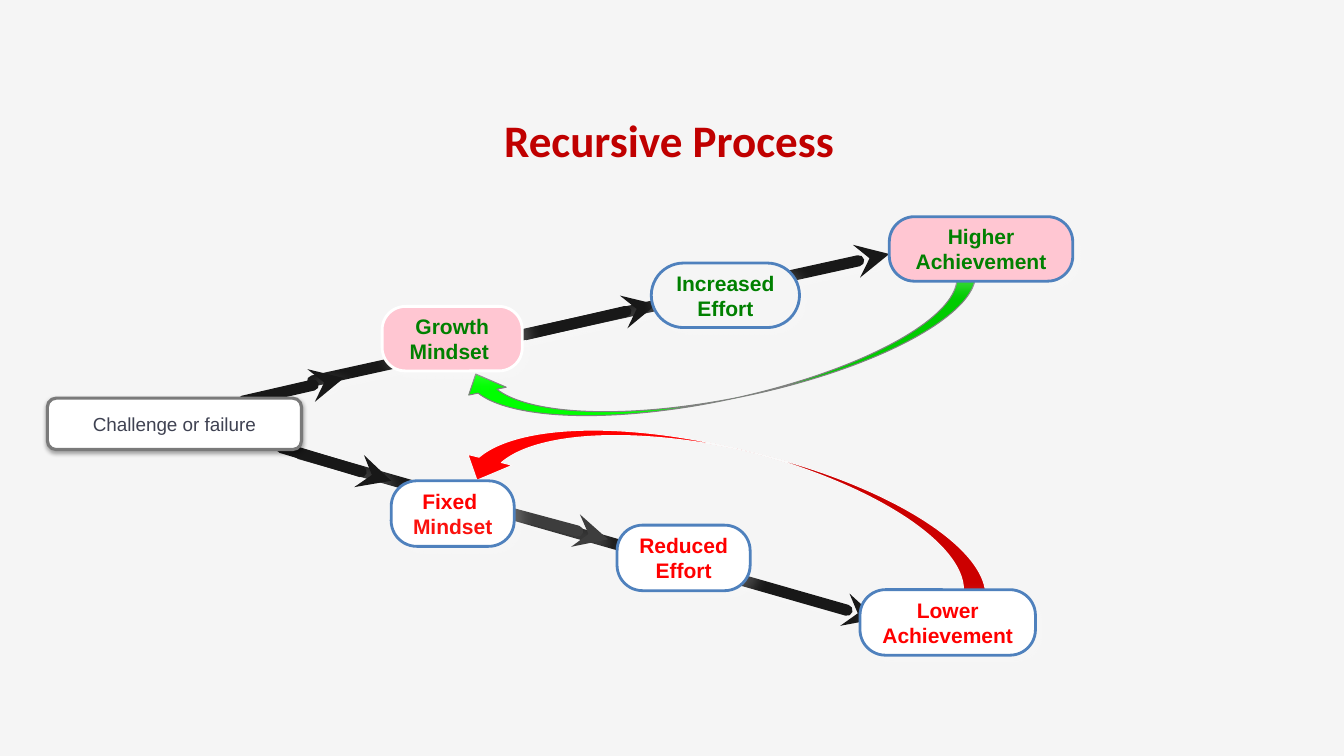
from lxml import etree
from pptx import Presentation
from pptx.dml.color import RGBColor
from pptx.enum import shapes, text
from pptx.oxml.ns import qn
from pptx.util import Inches, Pt

TITLE = "Recursive Process"
BLUE, WHITE, PINK, PAPER = "4F81BD", "FFFFFF", "FFC6D2", "F5F5F5"
RED, GREEN, BLACK = "FF0000", "008000", "181818"

# colour, opacity %, blur pt, distance pt, angle
GLOW = (WHITE, 21, 10, 6, 45)
DROP = ("000000", 35, 3.1, 1.8, 90)

# start, end, colour
ARROWS = [
    ((2.97, 4.5), (8.7, 6.14), BLACK),
    ((2.79, 4.44), (3.88, 4.77), BLACK),
    ((3.1, 3.78), (8.82, 2.52), BLACK),
    ((5.21, 3.32), (6.51, 3.02), BLACK),
    ((2.41, 3.98), (3.41, 3.75), BLACK),
    ((4.84, 5.03), (6.03, 5.35), "3D3D3D"),
]

# place, rotation, flipped, fill, line
LOOPS = [
    ((6.79, 2.2, 0.91, 5.41), 283.6, True, RED, "F9F9F9"),
    ((6.8, 0.96, 0.76, 5.25), 78.2, False, "00FF00", "808080"),
]

# words, place, corner, fill, line, font colour
STEPS = [
    ("Reduced Effort", (6.12, 5.21, 1.32, 0.65), 0.39, WHITE, BLUE, RED),
    ("Lower Achievement", (8.53, 5.85, 1.74, 0.65), 0.39, WHITE, BLUE, RED),
    ("Higher Achievement", (8.82, 2.15, 1.82, 0.64), 0.39, PINK, BLUE, GREEN),
    ("Growth Mindset ", (3.79, 3.04, 1.39, 0.64), 0.36, PINK, WHITE, GREEN),
    ("Increased Effort", (6.46, 2.61, 1.47, 0.64), 0.5, PAPER, BLUE, GREEN),
    ("Fixed \nMindset", (3.88, 4.77, 1.22, 0.65), 0.39, WHITE, BLUE, RED),
]
START = ("Challenge or failure", (0.47, 3.95, 2.52, 0.51), 0.17, WHITE, "7A7A7A", "3F4252")


def color(code):
    return RGBColor.from_string(code)


def shade(shape, look):
    """Give a shape or connector an outer shadow."""
    tone, alpha, blur, dist, angle = look
    props = shape._element.spPr
    for old in props.findall(qn("a:effectLst")):
        props.remove(old)
    effects = etree.SubElement(props, qn("a:effectLst"))
    outer = etree.SubElement(
        effects, qn("a:outerShdw"), blurRad=str(Pt(blur)), dist=str(Pt(dist)),
        dir=str(angle * 60000), algn="ctr", rotWithShape="0")
    clr = etree.SubElement(outer, qn("a:srgbClr"), val=tone)
    etree.SubElement(clr, qn("a:alpha"), val=str(alpha * 1000))


def paint(shape, fill, line, width):
    shape.shadow.inherit = False
    shape.fill.solid()
    shape.fill.fore_color.rgb = color(fill)
    shape.line.color.rgb = color(line)
    shape.line.width = Pt(width)


def write(frame, words, name, size, tone, bold):
    frame.text = words
    frame.word_wrap = True
    for para in frame.paragraphs:
        para.alignment = text.PP_ALIGN.CENTER
        for run in para.runs:
            font = run.font
            font.name, font.size, font.bold = name, Pt(size), bold
            font.color.rgb = color(tone)


def inset(frame, gap):
    frame.margin_left = frame.margin_right = Inches(gap)
    frame.margin_top = frame.margin_bottom = Inches(gap)


def add_arrow(slide, start, end, tone):
    arrow = slide.shapes.add_connector(
        shapes.MSO_CONNECTOR.STRAIGHT, *map(Inches, start + end))
    arrow.line.color.rgb = color(tone)
    arrow.line.width = Pt(8)
    line = arrow.line._get_or_add_ln()
    line.set("cap", "rnd")
    etree.SubElement(line, qn("a:tailEnd"), type="stealth")
    shade(arrow, GLOW)


def add_loop(slide, place, turn, flip, fill, line):
    loop = slide.shapes.add_shape(
        shapes.MSO_SHAPE.CURVED_LEFT_ARROW, *map(Inches, place))
    loop.rotation = turn
    if flip:
        loop._element.spPr.xfrm.set("flipV", "1")
    paint(loop, fill, line, 0.75)


def add_box(slide, words, place, corner, fill, line, tone,
            width=2, size=15, bold=True, gap=0.03, look=GLOW):
    box = slide.shapes.add_shape(
        shapes.MSO_SHAPE.ROUNDED_RECTANGLE, *map(Inches, place))
    box.adjustments[0] = corner
    paint(box, fill, line, width)
    shade(box, look)
    frame = box.text_frame
    frame.vertical_anchor = text.MSO_ANCHOR.MIDDLE
    inset(frame, gap)
    write(frame, words, "Arial", size, tone, bold)
    return box


def main():
    deck = Presentation()
    deck.slide_width, deck.slide_height = Inches(13.33), Inches(7.5)
    slide = deck.slides.add_slide(deck.slide_layouts[5])
    slide.background.fill.solid()
    slide.background.fill.fore_color.rgb = color(PAPER)

    title = slide.shapes.title
    title.left, title.top = Inches(3.26), Inches(1.02)
    title.width, title.height = Inches(6.75), Inches(0.94)
    title.text_frame.vertical_anchor = text.MSO_ANCHOR.TOP
    inset(title.text_frame, 0.1)
    write(title.text_frame, TITLE, "Calibri", 32.2, "C00000", True)

    for arrow in ARROWS:
        add_arrow(slide, *arrow)
    for loop in LOOPS:
        add_loop(slide, *loop)
    add_box(slide, *START, width=2.25, size=13.5, bold=False, gap=0.05, look=DROP)
    for step in STEPS:
        box = add_box(slide, *step)
    fixed = box.text_frame.paragraphs[1]
    fixed.runs[0].font.color.rgb = color("FB120E")

    deck.save("out.pptx")


if __name__ == "__main__":
    main()
